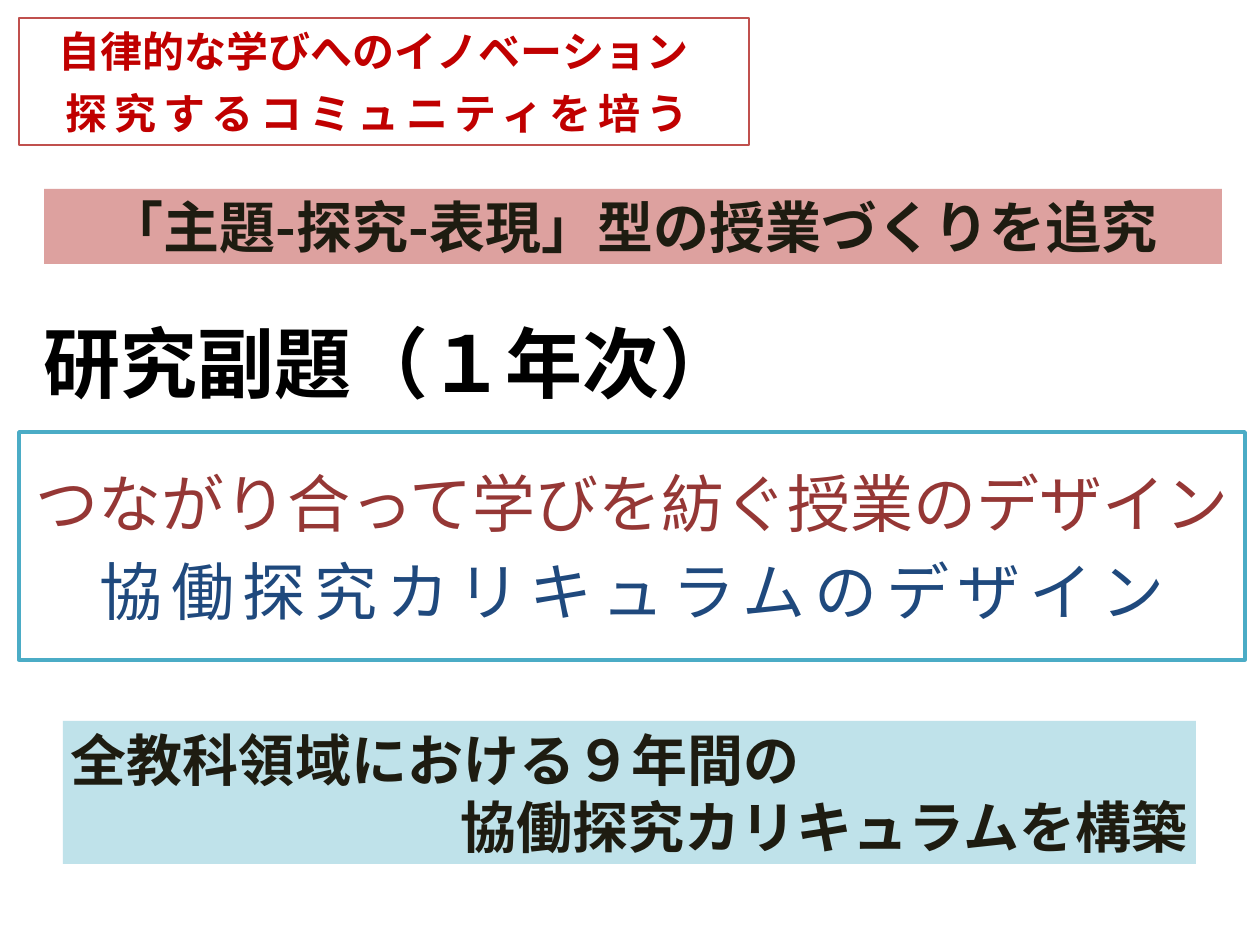
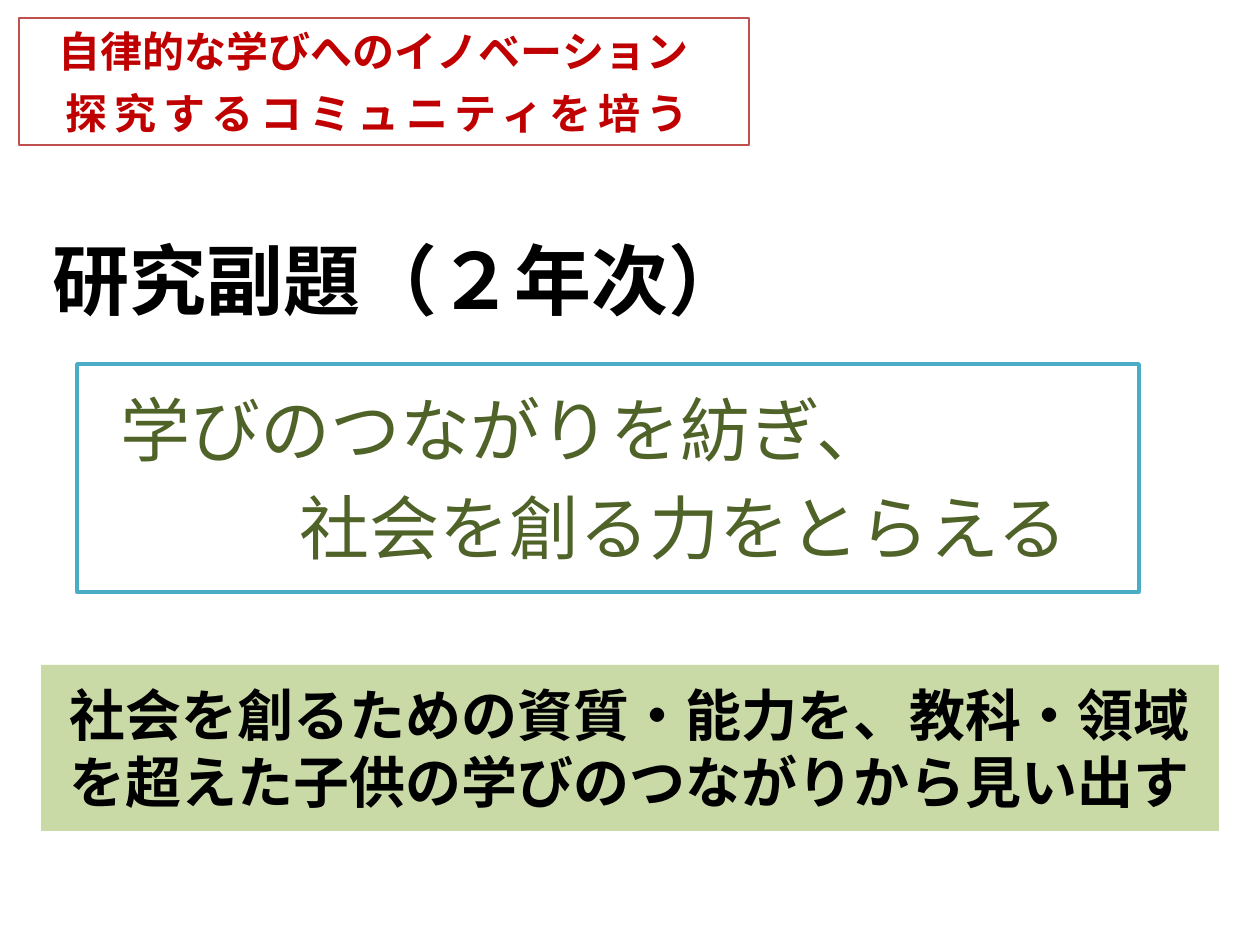
from lxml import etree
from pptx import Presentation
from pptx.dml.color import RGBColor
from pptx.enum.shapes import MSO_SHAPE
from pptx.enum.text import MSO_ANCHOR, PP_ALIGN
from pptx.oxml.ns import qn
from pptx.util import Emu, Pt

PX = 914400 / 126
FONT = "Noto Sans CJK JP"

RECT = MSO_SHAPE.RECTANGLE
TOP, MIDDLE = MSO_ANCHOR.TOP, MSO_ANCHOR.MIDDLE
LEFT, CENTER, RIGHT = PP_ALIGN.LEFT, PP_ALIGN.CENTER, PP_ALIGN.RIGHT

BLACK = RGBColor(0x00, 0x00, 0x00)
WHITE = RGBColor(0xFF, 0xFF, 0xFF)
INK = RGBColor(0x1E, 0x1C, 0x11)
RED = RGBColor(0xC0, 0x00, 0x00)
RED_LINE = RGBColor(0xC0, 0x50, 0x4D)
TEAL_LINE = RGBColor(0x4B, 0xAC, 0xC6)
MAROON = RGBColor(0x95, 0x37, 0x35)
NAVY = RGBColor(0x1F, 0x49, 0x7D)
OLIVE = RGBColor(0x4F, 0x62, 0x28)
PINK = RGBColor(0xD9, 0x96, 0x94)
PALE_BLUE = RGBColor(0xB7, 0xDE, 0xE8)
PALE_GREEN = RGBColor(0xC3, 0xD6, 0x9B)


def px(n):
    return Emu(round(n * PX))


def set_frame(sp, insets, anchor):
    tf = sp.text_frame
    tf.word_wrap = True
    tf.vertical_anchor = anchor
    tf.margin_left, tf.margin_top, tf.margin_right, tf.margin_bottom = map(px, insets)
    return tf


def add_text(tf, text, size=32, color=BLACK, bold=False, align=LEFT,
             indent=0, before=0, leading=None, tracking=0):
    """Add one paragraph; the frame's empty first paragraph is used first."""
    p = tf.paragraphs[0]
    if p.runs:
        p = tf.add_paragraph()
    p.alignment = align
    p.space_before = Pt(before)
    if leading:
        p.line_spacing = Pt(leading)
    if indent:
        pPr = p._p.get_or_add_pPr()
        pPr.set("marL", str(px(indent)))
        pPr.set("indent", "0")
    r = p.add_run()
    r.text = text
    r.font.size = Pt(size)
    r.font.bold = bold
    r.font.color.rgb = color
    r.font.name = FONT
    rPr = r._r.get_or_add_rPr()
    etree.SubElement(rPr, qn("a:ea")).set("typeface", FONT)
    if tracking:
        rPr.set("spc", str(round(tracking * 100)))


def add_box(s, box, insets, anchor=MIDDLE, fill=None, opacity=100,
            line=None, width=1):
    sp = s.shapes.add_shape(RECT, *map(px, box))
    sp.shadow.inherit = False
    if fill is None:
        sp.fill.background()
    else:
        sp.fill.solid()
        sp.fill.fore_color.rgb = fill
    if opacity < 100:
        clr = sp.fill._xPr.find(qn("a:solidFill"))[0]
        etree.SubElement(clr, qn("a:alpha")).set("val", str(opacity * 1000))
    if line is None:
        sp.line.fill.background()
    else:
        sp.line.color.rgb = line
        sp.line.width = Pt(width)
    return set_frame(sp, insets, anchor)


def add_header(s):
    """Research theme at the top of every slide."""
    tf = add_box(s, (19, 18, 730, 127), (10, 5, 10, 11), line=RED_LINE, width=0.75)
    style = dict(size=24, color=RED, bold=True, leading=32)
    add_text(tf, "自律的な学びへのイノベーション", indent=30, **style)
    add_text(tf, "探究するコミュニティを培う", indent=37, before=3.5,
             tracking=3.8, **style)


def add_title(s, text, box, align=LEFT):
    tf = set_frame(s.shapes.add_textbox(*map(px, box)), (13, 6, 13, 6), MIDDLE)
    add_text(tf, text, size=44, bold=True, align=align)


def add_subtitle_panel(s, box, size, lines):
    """Framed subtitle; the gap before each line is a fifth of its size."""
    tf = add_box(s, box, (13, 6, 13, 6), fill=WHITE, line=TEAL_LINE, width=2)
    for text, fmt in lines:
        add_text(tf, text, size=size, before=size / 5, **fmt)


def add_band(s, box, fill, opacity, lines, color=INK, anchor=TOP, pad=4):
    tf = add_box(s, box, (8, pad, 8, pad), anchor, fill, opacity)
    for text, align in lines:
        add_text(tf, text, color=color, bold=True, align=align)


def build_first_year(s):
    add_header(s)
    add_title(s, "研究副題（１年次）", (25, 310, 730, 103), CENTER)
    add_band(s, (44, 189, 1178, 75), PINK, 89,
             [("「主題-探究-表現」型の授業づくりを追究", CENTER)])
    add_band(s, (63, 721, 1133, 143), PALE_BLUE, 88,
             [("全教科領域における９年間の", LEFT),
              ("協働探究カリキュラムを構築", RIGHT)])
    add_subtitle_panel(s, (19, 432, 1226, 228), 36, [
        ("つながり合って学びを紡ぐ授業のデザイン", dict(color=MAROON, align=CENTER)),
        ("協働探究カリキュラムのデザイン", dict(color=NAVY, align=CENTER, tracking=5)),
    ])


def build_second_year(s):
    add_header(s)
    add_title(s, "研究副題（２年次）", (40, 217, 822, 123))
    add_band(s, (41, 665, 1178, 166), PALE_GREEN, 88,
             [("社会を創るための資質・能力を、教科・領域を超えた子供の学びのつながりから見い出す",
               CENTER)],
             color=BLACK, anchor=MIDDLE, pad=15)
    add_subtitle_panel(s, (77, 364, 1062, 228), 40, [
        ("学びのつながりを紡ぎ、", dict(color=OLIVE, indent=31)),
        ("社会を創る力をとらえる", dict(color=OLIVE, indent=210)),
    ])


def main():
    prs = Presentation()
    prs.slide_width, prs.slide_height = px(1260), px(945)
    blank = prs.slide_layouts[6]
    for build in (build_first_year, build_second_year):
        build(prs.slides.add_slide(blank))
    prs.save("out.pptx")


if __name__ == "__main__":
    main()
